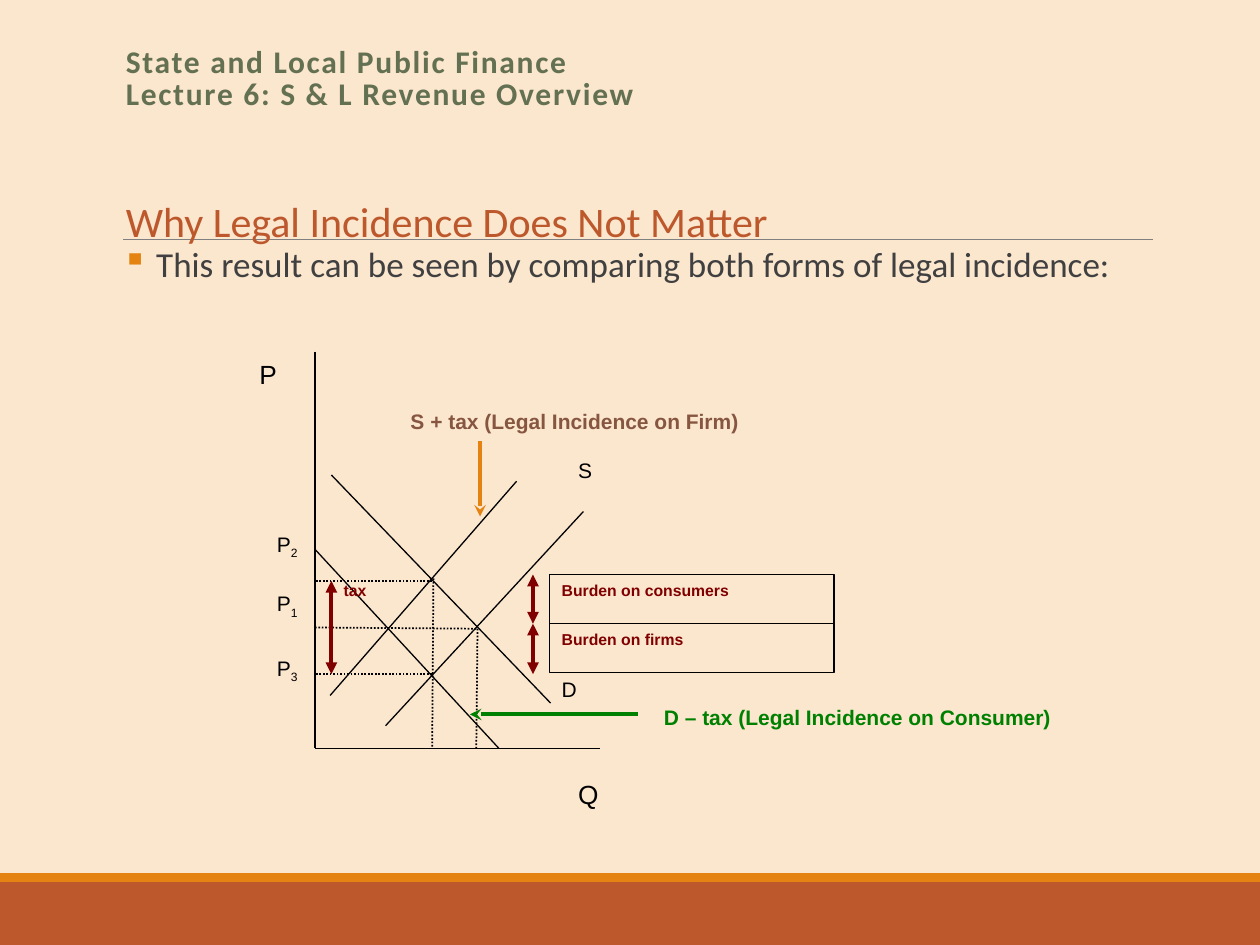
from dataclasses import dataclass

from pptx import Presentation
from pptx.dml.color import RGBColor
from pptx.enum.dml import MSO_LINE
from pptx.enum.shapes import MSO_CONNECTOR, MSO_SHAPE
from pptx.enum.text import MSO_ANCHOR, PP_ALIGN
from pptx.oxml.ns import qn
from pptx.util import Inches, Pt
from lxml import etree

RECT = MSO_SHAPE.RECTANGLE
STRAIGHT = MSO_CONNECTOR.STRAIGHT
DOTS = MSO_LINE.ROUND_DOT
TOP = MSO_ANCHOR.TOP
LEFT = PP_ALIGN.LEFT


@dataclass(frozen=True)
class Theme:
    paper: str = "FBE6CE"
    rust: str = "BD582C"
    amber: str = "E48312"
    gray: str = "808080"
    text: str = "404040"
    ink: str = "000000"
    brown: str = "865640"
    maroon: str = "800000"
    green: str = "008000"
    olive: str = "637052"
    sans: str = "Calibri"
    plain: str = "Arial"
    head: int = 24
    body: int = 20
    course: int = 18
    axis: int = 15
    label: int = 12
    note: int = 9
    thin: float = 0.75
    thick: float = 2.25


T = Theme()


def apply(item, fmt):
    for name, value in fmt.items():
        setattr(item, name, value)


def add_run(para, text, size, color, font=T.plain, bold=False):
    run = para.add_run()
    apply(run, {"text": text})
    apply(run.font, {"size": Pt(size), "name": font, "bold": bold})
    run.font.color.rgb = RGBColor.from_string(color)
    return run


def set_frame(shape, wrap=True):
    frame = shape.text_frame
    apply(frame, {"word_wrap": wrap, "vertical_anchor": TOP})
    para = frame.paragraphs[0]
    para.alignment = LEFT
    return para


def add_text(shapes, box, wrap=True):
    return set_frame(shapes.add_textbox(*map(Inches, box)), wrap)


def add_label(shapes, box, text, size, color=T.ink, bold=False, sub=None):
    para = add_text(shapes, box)
    add_run(para, text, size, color, bold=bold)
    if sub:
        run = add_run(para, sub, size, color)
        run._r.get_or_add_rPr().set("baseline", "-25000")


def add_rect(shapes, box, fill, edge=None):
    rect = shapes.add_shape(RECT, *map(Inches, box))
    rect.shadow.inherit = False
    rect.fill.solid()
    rect.fill.fore_color.rgb = RGBColor.from_string(fill)
    if edge:
        rect.line.color.rgb = RGBColor.from_string(edge)
        rect.line.width = Pt(T.thin)
    else:
        rect.line.fill.background()
    return rect


def add_line(shapes, ends, color=T.ink, width=T.thin, dash=None, head=None, tail=None):
    link = shapes.add_connector(STRAIGHT, *map(Inches, ends))
    link.line.color.rgb = RGBColor.from_string(color)
    apply(link.line, {"width": Pt(width), "dash_style": dash})
    props = link.line._get_or_add_ln()
    for tag, kind in (("a:headEnd", head), ("a:tailEnd", tail)):
        if kind:
            etree.SubElement(props, qn(tag)).set("type", kind)
    etree.SubElement(link._element.spPr, qn("a:effectLst"))


def add_bullet(para, mark, color):
    props = para._p.get_or_add_pPr()
    indent = Inches(0.06)
    props.set("marL", str(indent))
    props.set("indent", str(-indent))
    tint = etree.SubElement(props, qn("a:buClr"))
    etree.SubElement(tint, qn("a:srgbClr")).set("val", color)
    etree.SubElement(props, qn("a:buChar")).set("char", mark)


def add_base(slide):
    slide.background.fill.solid()
    slide.background.fill.fore_color.rgb = RGBColor.from_string(T.paper)
    add_rect(slide.shapes, (0, 7, 10, 0.5), T.rust)
    add_rect(slide.shapes, (0, 6.93, 10, 0.07), T.amber)
    add_line(slide.shapes, (0.98, 1.9, 9.15, 1.9), T.gray, 0.5)


def add_body(shapes):
    para = add_text(shapes, (0.97, 1.91, 8.1, 0.5))
    apply(shapes[-1].text_frame, {"margin_left": 0, "margin_right": 0})
    apply(para, {"line_spacing": 0.9, "space_before": Pt(6.8), "space_after": Pt(1.1)})
    add_bullet(para, "▪", T.amber)
    add_run(para, " This result can be seen by comparing both forms of legal incidence:",
            T.body, T.text, T.sans)


def add_heads(shapes):
    para = add_text(shapes, (0.9, 0.33, 8.25, 0.65))
    para.line_spacing = 0.85
    for row, text in enumerate(("State and Local Public Finance",
                                "Lecture 6: S & L Revenue Overview")):
        if row:
            para.add_line_break()
        run = add_run(para, text, T.course, T.olive, T.sans, True)
        run._r.get_or_add_rPr().set("spc", "100")
    para = add_text(shapes, (0.9, 1.5, 5.46, 0.5), False)
    add_run(para, "Why Legal Incidence Does Not Matter", T.head, T.rust, T.sans)


def add_graph(shapes):
    left, base = 2.5, 5.94
    high, mid, low = 4.56, 4.95, 5.35
    axes = [(left, 2.79, left, base), (left, base, 4.76, base)]
    curves = [(2.63, 3.77, 4.37, 5.58), (2.62, 5.52, 4.1, 3.82),
              (3.06, 5.76, 4.63, 4.06), (left, 4.36, 3.96, base)]
    for ends in axes + curves:
        add_line(shapes, ends)
    for ends in ((3.78, 4.99, left, 4.98), (3.43, 4.61, left, 4.61),
                 (3.43, low, left, low), (3.44, 4.59, 3.43, base),
                 (3.79, 4.99, 3.78, base)):
        add_line(shapes, ends, width=1, dash=DOTS)

    for text, x, y in (("P", 1.96, 2.79), ("Q", 4.49, 6.13)):
        add_label(shapes, (x, y, 0.4, 0.79), text, T.axis)
    for text, x, y in (("S", 4.49, 3.58), ("D", 4.36, 5.32)):
        add_label(shapes, (x, y, 0.67, 0.59), text, T.label)
    for sub, y in (("1", 4.64), ("2", 4.17), ("3", 5.15)):
        add_label(shapes, (2.1, y, 0.53, 0.59), "P", T.label, sub=sub)

    add_label(shapes, (2.63, high, 0.53, 0.78), "tax", T.note, T.maroon, True)
    for text, y in (("Burden on consumers", high), ("Burden on firms", mid)):
        rect = add_rect(shapes, (4.36, y, 2.26, 0.39), T.paper, T.ink)
        add_run(set_frame(rect), text, T.note, T.maroon, bold=True)
    for x, start, end in ((2.63, 4.61, low), (4.23, high, mid), (4.23, mid, low)):
        add_line(shapes, (x, start, x, end), T.maroon, T.thick,
                 head="triangle", tail="triangle")

    for text, box, color in (
        ("S + tax (Legal Incidence on Firm)", (3.16, 3.19, 4.74, 0.59), T.brown),
        ("D – tax (Legal Incidence on Consumer)", (5.17, 5.54, 3.81, 0.59), T.green),
    ):
        add_label(shapes, box, text, T.label, color, True)
    for ends, color in (((5.06, 5.67, 3.73, 5.67), T.green),
                        ((3.81, 3.5, 3.81, 4.1), T.amber)):
        add_line(shapes, ends, color, T.thick, tail="stealth")


def main():
    deck = Presentation()
    apply(deck, {"slide_width": Inches(10), "slide_height": Inches(7.5)})
    slide = deck.slides.add_slide(deck.slide_layouts[6])
    add_base(slide)
    add_body(slide.shapes)
    add_graph(slide.shapes.add_group_shape().shapes)
    add_heads(slide.shapes)
    deck.save("out.pptx")


if __name__ == "__main__":
    main()
